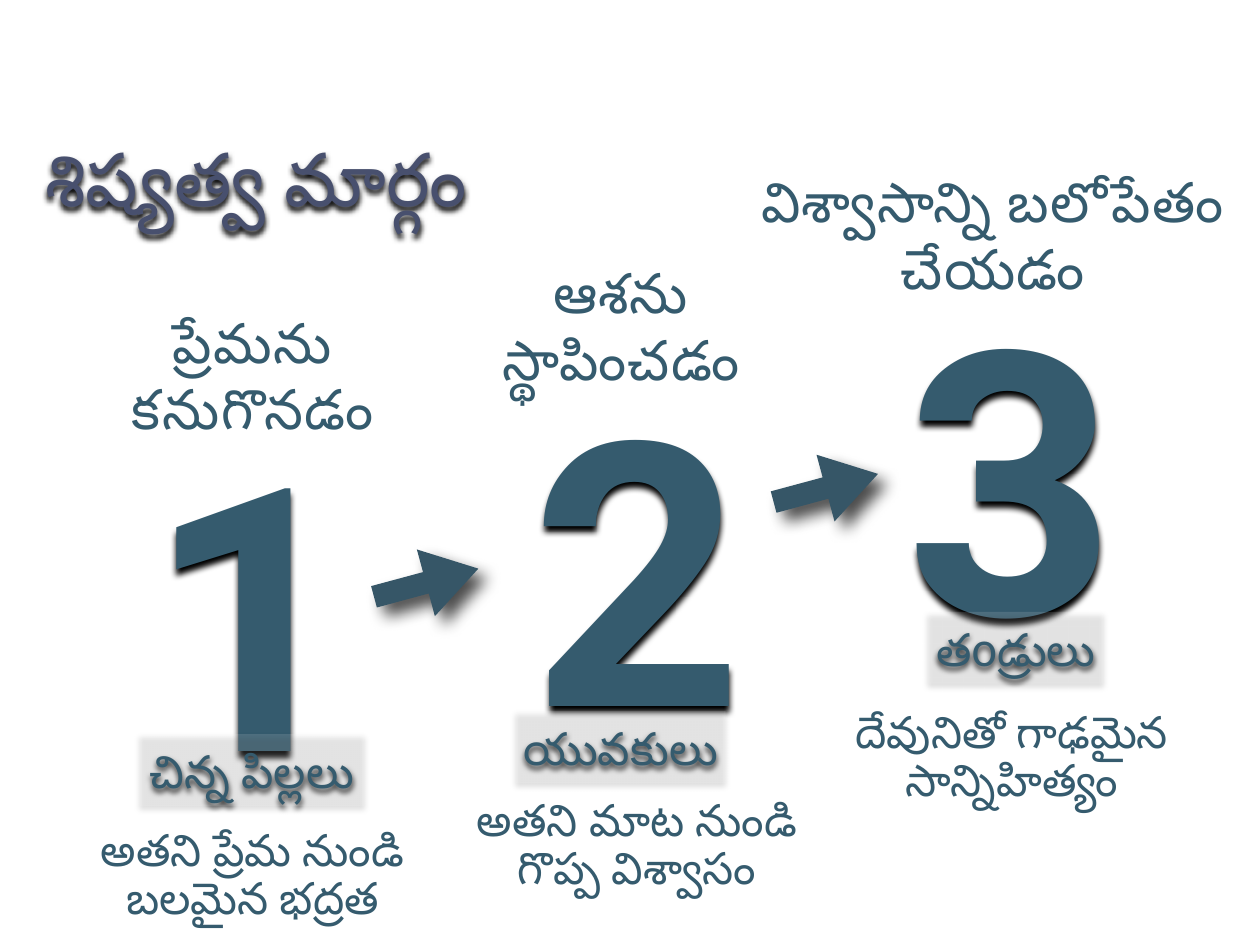
from lxml.etree import SubElement
from pptx import Presentation
from pptx.dml.color import RGBColor
from pptx.enum.shapes import MSO_SHAPE as Shape
from pptx.enum.text import MSO_ANCHOR as Anchor, PP_ALIGN as Align
from pptx.oxml.ns import qn
from pptx.util import Inches, Pt

TEAL = "355B6E"
SLATE = "48506E"
ARROW = "365667"
WHITE = "FFFFFF"

# Each box is (left, top, width); heights depend on the kind of element.
STEPS = [
    {"number": ("1", (1.58, 4.26, 2.53)),
     "heading": ("ప్రేమను కనుగొనడం", (0.74, 3.26, 4.22)),
     "label": ("చిన్న పిల్లలు", (1.58, 8.29, 2.53)),
     "detail": ("అతని ప్రేమ నుండి బలమైన భద్రత", (0.35, 9.13, 5))},
    {"number": ("2", (5.93, 3.75, 2.53)),
     "heading": ("ఆశను స్థాపించడం", (4.9, 2.7, 4.22)),
     "label": ("యువకులు", (5.82, 8.03, 2.37)),
     "detail": ("అతని మాట నుండి గొప్ప విశ్వాసం", (5.08, 8.79, 4.22)),
     "arrow": (4.2, 6.19)},
    {"number": ("3", (10.15, 2.73, 2.53)),
     "heading": ("విశ్వాసాన్ని బలోపేతం చేయడం", (8.37, 1.67, 5.67)),
     "label": ("తoడ్రులు", (10.47, 6.91, 1.98)),
     "detail": ("దేవునితో గాఢమైన సాన్నిహిత్యం", (9.31, 7.8, 4.22)),
     "arrow": (8.71, 5.12)},
]


def color(value):
    return RGBColor.from_string(value)


def add_shadow(shape, value, opacity, blur, distance, angle):
    shape.shadow.inherit = False
    effects = shape._element.spPr.find(qn("a:effectLst"))
    shadow = SubElement(effects, qn("a:outerShdw"), blurRad=str(Pt(blur)),
                        dist=str(Pt(distance)), dir=str(angle * 60000),
                        algn="ctr", rotWithShape="0")
    tone = SubElement(shadow, qn("a:srgbClr"), val=value)
    SubElement(tone, qn("a:alpha"), val=str(opacity * 1000))


def write(shape, text, font, size, tone=TEAL, align=Align.CENTER, bold=False,
          wrap=True, inset=0.06, line_spacing=None, tracking=None):
    """Put one formatted, vertically centred paragraph into a shape."""
    frame = shape.text_frame
    frame.text = text
    frame.word_wrap = wrap
    frame.vertical_anchor = Anchor.MIDDLE
    frame.margin_left = frame.margin_right = Inches(inset)
    frame.margin_top = frame.margin_bottom = Inches(inset)
    para = frame.paragraphs[0]
    para.alignment = align
    para.space_before = Pt(0)
    if line_spacing:
        para.line_spacing = line_spacing
    span = para.runs[0]
    span.font.name = font
    span.font.size = Pt(size)
    span.font.bold = bold
    span.font.color.rgb = color(tone)
    if tracking:
        span.font._element.set("spc", str(int(tracking * 100)))


def add_text(shapes, text, place, height, font, size, **style):
    left, top, width = place
    box = shapes.add_textbox(Inches(left), Inches(top), Inches(width), Inches(height))
    write(box, text, font, size, **style)
    return box


def add_label(shapes, text, place):
    left, top, width = place
    label = shapes.add_shape(Shape.RECTANGLE, Inches(left), Inches(top),
                             Inches(width), Inches(0.81))
    label.fill.solid()
    label.fill.fore_color.rgb = color(WHITE)
    tone = label._element.spPr.find(qn("a:solidFill")).find(qn("a:srgbClr"))
    SubElement(tone, qn("a:alpha"), val="13000")
    label.line.fill.background()
    add_shadow(label, "060606", 100, 5, 3, 90)
    write(label, text, "Roboto", 37, wrap=False, inset=0.04)


def add_arrow(shapes, left, top):
    arrow = shapes.add_shape(Shape.RIGHT_ARROW, Inches(left), Inches(top),
                             Inches(1.22), Inches(0.78))
    arrow.rotation = 344.9
    arrow.adjustments[0] = 0.32
    arrow.adjustments[1] = 0.786
    arrow.fill.solid()
    arrow.fill.fore_color.rgb = color(ARROW)
    arrow.line.fill.background()
    add_shadow(arrow, "000000", 70, 13, 11, 45)


def add_step(page, step):
    shapes = page.shapes.add_group_shape().shapes
    add_text(shapes, *step["heading"], 1.94, "Roboto Condensed", 45, tracking=0.9)
    number = add_text(shapes, *step["number"], 5.11, "Roboto", 300,
                      bold=True, wrap=False, tracking=6)
    add_shadow(number, "000000", 100, 5, 5, 90)
    add_text(shapes, *step["detail"], 1.52, "Times New Roman", 36, line_spacing=0.9)
    add_label(shapes, *step["label"])
    if "arrow" in step:
        add_arrow(shapes, *step["arrow"])


def add_title(page, text):
    title = page.shapes.title
    title.left, title.top = Inches(0.45), Inches(1.34)
    title.width, title.height = Inches(13.03), Inches(1.31)
    write(title, text, "Times New Roman", 60, tone=SLATE, align=Align.LEFT)
    add_shadow(title, "000000", 100, 5, 3, 90)


def main():
    deck = Presentation()
    deck.slide_width, deck.slide_height = Inches(14.22), Inches(10.67)
    page = deck.slides.add_slide(deck.slide_layouts[5])
    add_title(page, "శిష్యత్వ మార్గం")
    for step in STEPS:
        add_step(page, step)
    deck.save("out.pptx")


if __name__ == "__main__":
    main()
